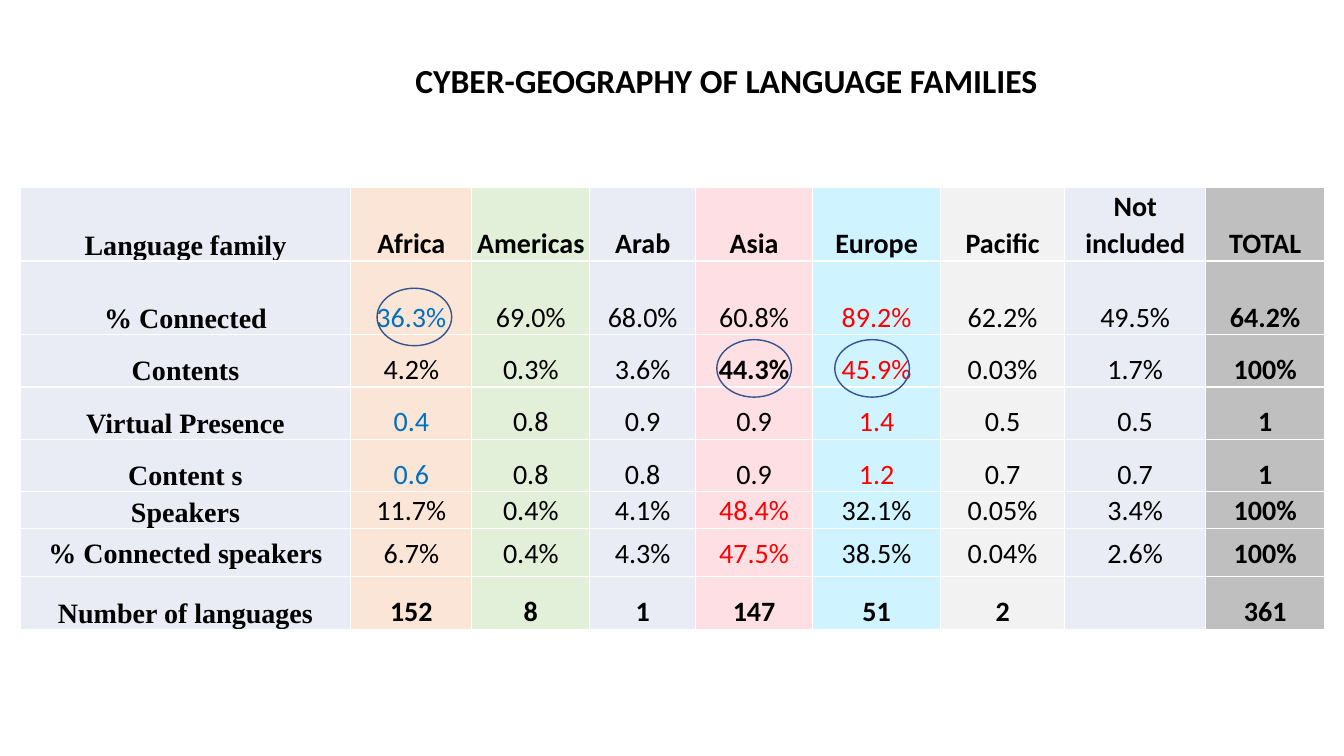
"""Build a slide with a table of language families by world region."""
from lxml.etree import SubElement
from pptx import Presentation
from pptx.dml.color import RGBColor
from pptx.enum.shapes import MSO_SHAPE
from pptx.enum.text import MSO_ANCHOR, PP_ALIGN
from pptx.oxml.ns import qn
from pptx.util import Inches, Pt

TITLE = "CYBER-GEOGRAPHY OF LANGUAGE FAMILIES"
ROWS = [
    ("Language family", "Africa", "Americas", "Arab", "Asia", "Europe", "Pacific", "Not included", "TOTAL"),
    ("% Connected", "36.3%", "69.0%", "68.0%", "60.8%", "89.2%", "62.2%", "49.5%", "64.2%"),
    ("Contents", "4.2%", "0.3%", "3.6%", "44.3%", "45.9%", "0.03%", "1.7%", "100%"),
    ("Virtual Presence", "0.4", "0.8", "0.9", "0.9", "1.4", "0.5", "0.5", "1"),
    ("Content s", "0.6", "0.8", "0.8", "0.9", "1.2", "0.7", "0.7", "1"),
    ("Speakers", "11.7%", "0.4%", "4.1%", "48.4%", "32.1%", "0.05%", "3.4%", "100%"),
    ("% Connected speakers", "6.7%", "0.4%", "4.3%", "47.5%", "38.5%", "0.04%", "2.6%", "100%"),
    ("Number of languages", "152", "8", "1", "147", "51", "2", "", "361"),
]
COL_WIDTHS = [3.28, 1.2, 1.17, 1.05, 1.16, 1.27, 1.23, 1.4, 1.18]
ROW_HEIGHTS = [0.73, 0.73, 0.52, 0.52, 0.52, 0.34, 0.48, 0.52]
COLORS = {
    "text": "000000", "low": "0070C0", "high": "FF0000", "border": "FFFFFF", "ring": "325491",
    "plain": "E9EBF5", "africa": "FBE5D6", "americas": "E2F0D9", "asia": "FEE0E4",
    "europe": "CFF4FF", "pacific": "F2F2F2", "total": "BFBFBF",
}
COL_FILLS = ["plain", "africa", "americas", "plain", "asia", "europe", "pacific", "plain", "total"]
MARKS = {
    "low": {(1, 1), (3, 1), (4, 1)},
    "high": {(1, 5), (2, 5), (3, 5), (4, 5), (5, 4), (6, 4)},
}
BOLD_VALUE = (2, 4)
MIDDLE_ROW = 6
RINGS = [(7.11, 3.37), (8.28, 3.37), (3.74, 2.86)]
RING_SIZE = (0.74, 0.57)


def rgb(name):
    return RGBColor.from_string(COLORS[name])


def style_font(font, size, name, color, bold):
    font.size, font.name, font.bold = Pt(size), name, bold
    font.color.rgb = rgb(color)


def add_borders(cell):
    tc_pr = cell._tc.get_or_add_tcPr()
    for side in ("lnL", "lnR", "lnT", "lnB"):
        ln = SubElement(tc_pr, qn(f"a:{side}"), w=str(Pt(1)))
        fill = SubElement(ln, qn("a:solidFill"))
        SubElement(fill, qn("a:srgbClr"), val=COLORS["border"])


def fill_cell(cell, row, col, text):
    add_borders(cell)
    cell.fill.solid()
    cell.fill.fore_color.rgb = rgb(COL_FILLS[col])
    cell.margin_left = cell.margin_right = Inches(0.05)
    cell.margin_top = cell.margin_bottom = 0
    cell.vertical_anchor = MSO_ANCHOR.MIDDLE if row == MIDDLE_ROW else MSO_ANCHOR.BOTTOM
    cell.text_frame.text = text
    p = cell.text_frame.paragraphs[0]
    p.alignment, p.line_spacing = PP_ALIGN.CENTER, 1.07
    color = next((name for name, cells in MARKS.items() if (row, col) in cells), "text")
    edge = row in (0, len(ROWS) - 1) or col in (0, len(COL_WIDTHS) - 1)
    for r in p.runs:
        style_font(r.font, 20, "Calibri" if col else "Times New Roman", color,
                   edge or (row, col) == BOLD_VALUE)


def add_table(s):
    frame = s.shapes.add_table(len(ROWS), len(COL_WIDTHS), Inches(0.2), Inches(1.86),
                               Inches(sum(COL_WIDTHS)), Inches(sum(ROW_HEIGHTS)))
    table = frame.table
    table.first_row = table.horz_banding = False
    for column, width in zip(table.columns, COL_WIDTHS):
        column.width = Inches(width)
    for line, height in zip(table.rows, ROW_HEIGHTS):
        line.height = Inches(height)
    for row, texts in enumerate(ROWS):
        for col, text in enumerate(texts):
            fill_cell(table.cell(row, col), row, col, text)


def add_title(s):
    sp = s.shapes.title
    sp.left, sp.top, sp.width, sp.height = map(Inches, (4.02, 0.54, 6.46, 0.5))
    tf = sp.text_frame
    tf.text = TITLE
    tf.word_wrap = False
    p = tf.paragraphs[0]
    p.alignment = PP_ALIGN.LEFT
    style_font(p.runs[0].font, 24, "Calibri", "text", True)


def add_rings(s):
    for spot in RINGS:
        sp = s.shapes.add_shape(MSO_SHAPE.OVAL, *map(Inches, spot + RING_SIZE))
        sp.shadow.inherit = False
        sp.fill.background()
        sp.line.color.rgb = rgb("ring")
        sp.line.width = Pt(1)


def main():
    prs = Presentation()
    prs.slide_width, prs.slide_height = Inches(13.33), Inches(7.5)
    s = prs.slides.add_slide(prs.slide_layouts[5])
    add_title(s)
    add_table(s)
    add_rings(s)
    prs.save("out.pptx")


if __name__ == "__main__":
    main()
